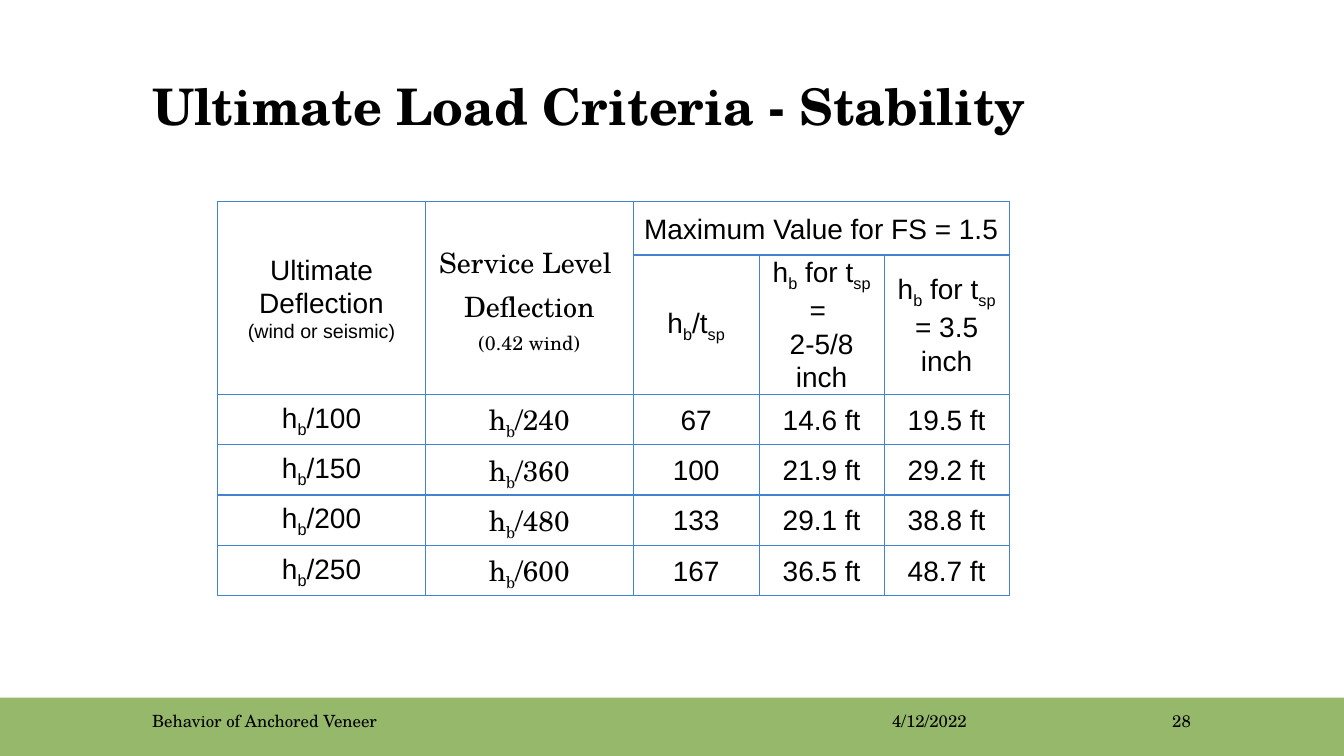
from dataclasses import dataclass
from typing import Any

from lxml.etree import SubElement
from pptx import Presentation
from pptx.dml.color import RGBColor
from pptx.enum.shapes import MSO_SHAPE
from pptx.enum.text import MSO_ANCHOR, PP_ALIGN
from pptx.oxml.ns import qn
from pptx.util import Inches, Pt

SERIF = "TeX Gyre Schola"
SANS = "Arial"
BLACK = "000000"
BORDER_BLUE = "4283D2"
FOOTER_GREEN = "96B86B"
SUBSCRIPT_MARK = "~"


@dataclass
class FooterItem:
    text: str
    left: float
    width: float
    align: PP_ALIGN = PP_ALIGN.LEFT


@dataclass
class HeaderCell:
    row: int
    column: int
    lines: list[str]
    font: str = SANS
    row_span: int = 1
    column_span: int = 1
    anchor: MSO_ANCHOR = MSO_ANCHOR.MIDDLE


FOOTER_ITEMS = [
    FooterItem("4/12/2022", 8.75, 1.44),
    FooterItem("Behavior of Anchored Veneer", 1.41, 6.92),
    FooterItem("28", 10.58, 1.33, PP_ALIGN.RIGHT),
]
HEADER_CELLS = [
    HeaderCell(0, 0, ["Ultimate", "Deflection", "(wind or seismic)"], row_span=2),
    HeaderCell(0, 1, ["Service Level ", "Deflection", "(0.42 wind)"], SERIF, row_span=2),
    HeaderCell(0, 2, ["Maximum Value for FS = 1.5"], column_span=3),
    HeaderCell(1, 2, ["h~b~/t~sp~"]),
    HeaderCell(1, 3, ["h~b~ for t~sp~ = ", "2-5/8 inch"], anchor=MSO_ANCHOR.TOP),
    HeaderCell(1, 4, ["h~b~ for t~sp~ = 3.5 inch"]),
]
DATA_ROWS = [
    ["h~b~/100", "h~b~/240", "67", "14.6 ft", "19.5 ft"],
    ["h~b~/150", "h~b~/360", "100", "21.9 ft", "29.2 ft"],
    ["h~b~/200", "h~b~/480", "133", "29.1 ft", "38.8 ft"],
    ["h~b~/250", "h~b~/600", "167", "36.5 ft", "48.7 ft"],
]
COLUMN_FONTS = [SANS, SERIF, SANS, SANS, SANS]
COLUMN_WIDTHS = [2.06, 2.06, 1.25, 1.24, 1.24]
ROW_HEIGHTS = [0.53, 1.38] + [0.5] * len(DATA_ROWS)


def color(code: str) -> RGBColor:
    return RGBColor.from_string(code)


def apply_format(target: Any, values: dict[str, Any]) -> None:
    for name, value in values.items():
        setattr(target, name, value)


def add_text(para: Any, text: str, size: float, font: str, bold: bool = False) -> None:
    for index, piece in enumerate(text.split(SUBSCRIPT_MARK)):
        if not piece:
            continue
        span = para.add_run()
        span.text = piece
        apply_format(span.font, {"size": Pt(size), "name": font, "bold": bold})
        span.font.color.rgb = color(BLACK)
        if index % 2:
            span.font._element.set("baseline", "-25000")


def add_borders(cell: Any) -> None:
    properties = cell._tc.get_or_add_tcPr()
    for position, side in enumerate(("lnL", "lnR", "lnT", "lnB")):
        line = SubElement(properties, qn(f"a:{side}"), w=str(Pt(1)))
        fill = SubElement(line, qn("a:solidFill"))
        SubElement(fill, qn("a:srgbClr"), val=BORDER_BLUE)
        properties.insert(position, line)


def fill_cell(cell: Any, lines: list[str], font: str, anchor: MSO_ANCHOR) -> None:
    cell.vertical_anchor = anchor
    for index, line in enumerate(lines):
        para = cell.text_frame.paragraphs[0] if index == 0 else cell.text_frame.add_paragraph()
        apply_format(para, {"alignment": PP_ALIGN.CENTER, "line_spacing": 1.07})
        add_text(para, line, 14 if line.startswith("(") else 20, font)


def add_title(page: Any) -> None:
    title = page.shapes.title
    apply_format(title, {"left": Inches(1.41), "top": Inches(0.42),
                         "width": Inches(10.5), "height": Inches(1.25)})
    apply_format(title.text_frame, {
        "vertical_anchor": MSO_ANCHOR.MIDDLE, "word_wrap": True,
        "margin_left": Inches(0.1), "margin_right": Inches(0.1),
        "margin_top": 0, "margin_bottom": 0})
    para = title.text_frame.paragraphs[0]
    para.alignment = PP_ALIGN.LEFT
    add_text(para, "Ultimate Load Criteria - Stability", 36, SERIF, bold=True)


def add_criteria_table(page: Any) -> None:
    table = page.shapes.add_table(
        len(ROW_HEIGHTS), len(COLUMN_WIDTHS), Inches(2.16), Inches(2),
        Inches(sum(COLUMN_WIDTHS)), Inches(sum(ROW_HEIGHTS))).table
    apply_format(table, {"first_row": False, "horz_banding": False})
    for column, width in zip(table.columns, COLUMN_WIDTHS):
        column.width = Inches(width)
    for row, height in zip(table.rows, ROW_HEIGHTS):
        row.height = Inches(height)
    for cell in table.iter_cells():
        apply_format(cell, {"margin_left": Inches(0.07), "margin_right": Inches(0.07),
                            "margin_top": 0, "margin_bottom": 0})
        cell.fill.background()
        add_borders(cell)
    for header in HEADER_CELLS:
        cell = table.cell(header.row, header.column)
        if header.row_span > 1 or header.column_span > 1:
            cell.merge(table.cell(header.row + header.row_span - 1,
                                  header.column + header.column_span - 1))
        fill_cell(cell, header.lines, header.font, header.anchor)
    for row_index, values in enumerate(DATA_ROWS, start=2):
        for column_index, (value, font) in enumerate(zip(values, COLUMN_FONTS)):
            fill_cell(table.cell(row_index, column_index), [value], font, MSO_ANCHOR.MIDDLE)


def add_footer(page: Any) -> None:
    bar = page.shapes.add_shape(
        MSO_SHAPE.RECTANGLE, 0, Inches(6.92), Inches(13.33), Inches(0.58))
    bar.shadow.inherit = False
    bar.fill.solid()
    bar.fill.fore_color.rgb = color(FOOTER_GREEN)
    bar.line.fill.background()
    for item in FOOTER_ITEMS:
        box = page.shapes.add_textbox(
            Inches(item.left), Inches(7), Inches(item.width), Inches(0.3))
        apply_format(box.text_frame, {"word_wrap": True, "vertical_anchor": MSO_ANCHOR.MIDDLE})
        para = box.text_frame.paragraphs[0]
        para.alignment = item.align
        add_text(para, item.text, 12, SERIF)


def main() -> None:
    deck = Presentation()
    apply_format(deck, {"slide_width": Inches(13.33), "slide_height": Inches(7.5)})
    page = deck.slides.add_slide(deck.slide_layouts.get_by_name("Title Only"))
    add_title(page)
    add_criteria_table(page)
    add_footer(page)
    deck.save("out.pptx")


if __name__ == "__main__":
    main()
